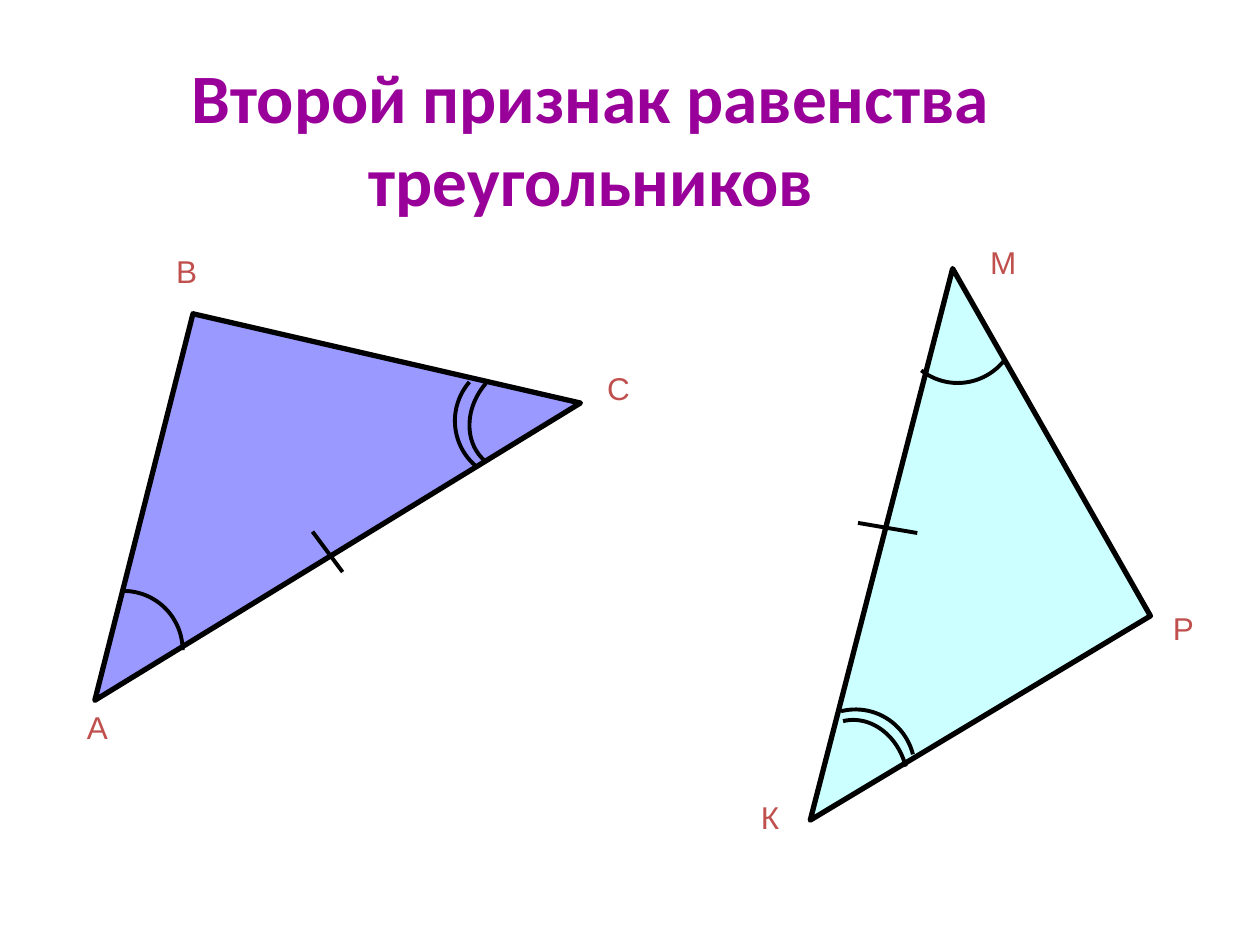
from lxml import etree
from pptx import Presentation
from pptx.dml.color import RGBColor
from pptx.enum.shapes import MSO_CONNECTOR, MSO_SHAPE
from pptx.enum.text import MSO_ANCHOR, PP_ALIGN
from pptx.oxml.ns import qn
from pptx.util import Pt

ARC = MSO_SHAPE.ARC
STRAIGHT = MSO_CONNECTOR.STRAIGHT
BOTTOM = MSO_ANCHOR.BOTTOM
CENTER = PP_ALIGN.CENTER

BLACK = RGBColor(0x00, 0x00, 0x00)
PURPLE = RGBColor(0x99, 0x00, 0x99)
RED = RGBColor(0xC0, 0x50, 0x4D)
VIOLET = RGBColor(0x99, 0x99, 0xFF)
CYAN = RGBColor(0xCC, 0xFF, 0xFF)


class Drawing:
    side_width = 3
    mark_width = 2.25
    arc_size = 67.7
    label_height = 27.4

    def __init__(self, slide):
        self.shapes = slide.shapes

    def stroke(self, shape, width):
        shape.line.color.rgb = BLACK
        shape.line.width = Pt(width)

    def text(self, wording, left, top, width, height, font, size, color):
        box = self.shapes.add_textbox(Pt(left), Pt(top), Pt(width), Pt(height))
        box.text_frame.word_wrap = True
        paragraph = box.text_frame.paragraphs[0]
        paragraph.text = wording
        paragraph.font.name = font
        paragraph.font.size = Pt(size)
        paragraph.font.color.rgb = color
        return box.text_frame

    def title(self, wording, left, top, width, height):
        frame = self.text(wording, left, top, width, height, "Calibri", 39.6, PURPLE)
        frame.vertical_anchor = BOTTOM
        frame.paragraphs[0].alignment = CENTER
        frame.paragraphs[0].font.bold = True

    def vertex_label(self, letter, left, top, width):
        frame = self.text(letter, left, top, width, self.label_height, "Arial", 18, RED)
        frame.paragraphs[0].line_spacing = 0.76

    def triangle(self, vertices, color):
        first, *others = [(Pt(x), Pt(y)) for x, y in vertices]
        builder = self.shapes.build_freeform(*first)
        builder.add_line_segments(others, close=True)
        outline = builder.convert_to_shape()
        outline.shadow.inherit = False
        outline.fill.solid()
        outline.fill.fore_color.rgb = color
        self.stroke(outline, self.side_width)
        etree.SubElement(outline.line._get_or_add_ln(), qn("a:round"))

    def side_tick(self, x1, y1, x2, y2):
        tick = self.shapes.add_connector(STRAIGHT, Pt(x1), Pt(y1), Pt(x2), Pt(y2))
        self.stroke(tick, self.mark_width)
        etree.SubElement(tick._element.spPr, qn("a:effectLst"))

    def angle_arc(self, left, top, rotation, width=arc_size):
        arc = self.shapes.add_shape(ARC, Pt(left), Pt(top), Pt(width), Pt(self.arc_size))
        arc.rotation = rotation
        arc.shadow.inherit = False
        arc.fill.background()
        self.stroke(arc, self.mark_width)


def main():
    deck = Presentation()
    deck.slide_width, deck.slide_height = Pt(720), Pt(540)
    drawing = Drawing(deck.slides.add_slide(deck.slide_layouts[6]))

    drawing.title("Второй признак равенства треугольников", 31, 26, 613.4, 103.7)

    drawing.triangle([(110.3, 179.3), (331.7, 230.3), (54.2, 400.2)], VIOLET)
    drawing.triangle([(657.4, 352), (463, 468.7), (544.4, 153.5)], CYAN)

    drawing.side_tick(178.6, 303.8, 195.8, 326.9)
    drawing.side_tick(490.3, 298.8, 524.2, 304.6)

    inner_width = 56.9
    drawing.angle_arc(36.7, 337.7, 0)
    drawing.angle_arc(513.4, 151.2, 128)
    drawing.angle_arc(259.9, 206.6, 221)
    drawing.angle_arc(455, 405.4, 346)
    drawing.angle_arc(270.7, 203.8, 221, inner_width)
    drawing.angle_arc(461.5, 411.1, 346, inner_width)

    for letter, left, top, width in [
        ("А", 42.5, 406.1, 28.1),
        ("В", 93.6, 145.4, 33.8),
        ("С", 339.8, 212.4, 25.2),
        ("К", 427.7, 457.2, 28.8),
        ("М", 558.7, 140.4, 39.6),
        ("Р", 663.1, 349.2, 31),
    ]:
        drawing.vertex_label(letter, left, top, width)

    deck.save("out.pptx")


if __name__ == "__main__":
    main()
